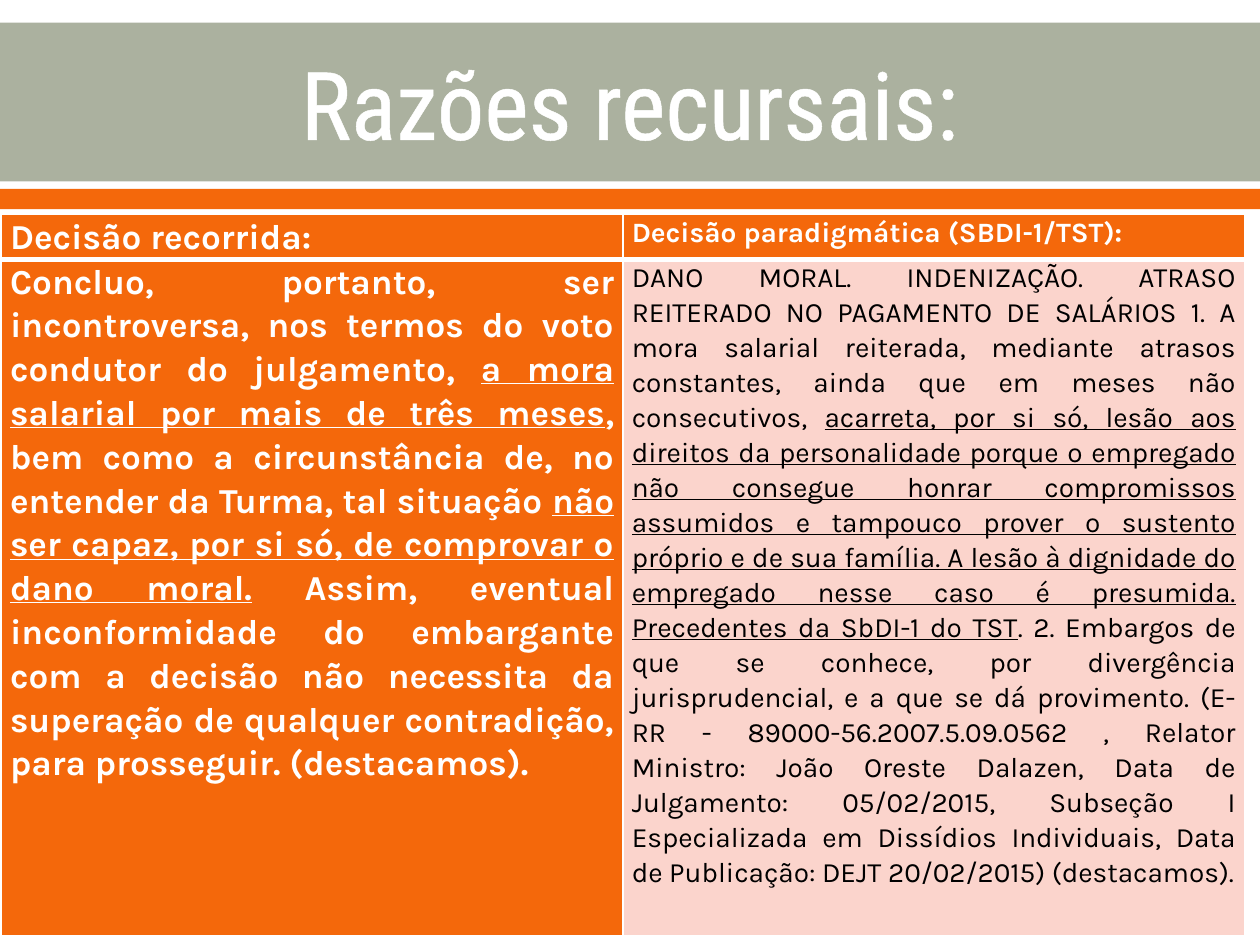
from dataclasses import dataclass

from lxml import etree
from pptx import Presentation
from pptx.dml.color import RGBColor
from pptx.enum.shapes import MSO_SHAPE
from pptx.enum.text import MSO_ANCHOR, PP_ALIGN
from pptx.oxml.ns import qn
from pptx.util import Inches, Pt

RECTANGLE = MSO_SHAPE.RECTANGLE
MIDDLE = MSO_ANCHOR.MIDDLE
CENTER, JUSTIFY = PP_ALIGN.CENTER, PP_ALIGN.JUSTIFY


@dataclass(frozen=True)
class Theme:
    sage: str = "ABB19F"
    orange: str = "F4680B"
    pink: str = "FBD4CC"
    white: str = "FFFFFF"
    black: str = "000000"
    title_font: str = "Roboto Condensed"
    body_font: str = "Karla"
    title_size: float = 54
    large: float = 20
    small: float = 16
    title_outline: float = 1.1
    thin: float = 1
    thick: float = 3


THEME = Theme()
WIDTH, HEIGHT = 10, 7.5
TITLE = "Razões recursais:"

# Each passage is a list of (text, underlined) pieces.
APPEALED_HEADING = [("Decisão recorrida:", False)]
PARADIGM_HEADING = [("Decisão paradigmática (SBDI-1/TST):", False)]
APPEALED_DECISION = [
    ("Concluo, portanto, ser incontroversa, nos termos do voto condutor do "
     "julgamento, ", False),
    ("a mora salarial por mais de três meses", True),
    (", bem como a circunstância de, no entender da Turma, tal situação ", False),
    ("não ser capaz, por si só, de comprovar o dano moral.", True),
    (" Assim, eventual inconformidade do embargante com a decisão não necessita "
     "da superação de qualquer contradição, para prosseguir. (destacamos).", False),
]
PARADIGM_DECISION = [
    ("DANO MORAL. INDENIZAÇÃO. ATRASO REITERADO NO PAGAMENTO DE SALÁRIOS 1. "
     "A mora salarial reiterada, mediante atrasos constantes, ainda que em meses "
     "não consecutivos, ", False),
    ("acarreta, por si só, lesão aos direitos da personalidade porque o empregado "
     "não consegue honrar compromissos assumidos e tampouco prover o sustento "
     "próprio e de sua família. A lesão à dignidade do empregado nesse caso é "
     "presumida. Precedentes da SbDI-1 do TST", True),
    (". 2. Embargos de que se conhece, por divergência jurisprudencial, e a que se "
     "dá provimento. (E-RR - 89000-56.2007.5.09.0562 , Relator Ministro: João "
     "Oreste Dalazen, Data de Julgamento: 05/02/2015, Subseção I Especializada em "
     "Dissídios Individuais, Data de Publicação: DEJT 20/02/2015) (destacamos).",
     False),
]


def rgb(color):
    return RGBColor.from_string(color)


def line_xml(tag, color, width):
    line = etree.Element(qn(tag), w=str(Pt(width)))
    fill = etree.SubElement(line, qn("a:solidFill"))
    etree.SubElement(fill, qn("a:srgbClr"), val=color)
    return line


def add_run(paragraph, text, font, size, color, bold=False, underline=False):
    run = paragraph.add_run()
    run.text = text
    run.font.name, run.font.size = font, Pt(size)
    run.font.bold, run.font.underline = bold, underline
    run.font.color.rgb = rgb(color)
    return run


def add_band(slide, box, color):
    band = slide.shapes.add_shape(RECTANGLE, *map(Inches, box))
    band.shadow.inherit = False
    band.fill.solid()
    band.fill.fore_color.rgb = rgb(color)
    band.line.fill.background()


def add_title(slide, box):
    frame = slide.shapes.add_textbox(*map(Inches, box)).text_frame
    frame.word_wrap = True
    frame.vertical_anchor = MIDDLE
    paragraph = frame.paragraphs[0]
    paragraph.alignment = CENTER
    run = add_run(paragraph, TITLE, THEME.title_font, THEME.title_size, THEME.white)
    outline = line_xml("a:ln", THEME.white, THEME.title_outline)
    run._r.get_or_add_rPr().insert(0, outline)


def set_borders(cell, top, bottom):
    widths = {"a:lnL": THEME.thin, "a:lnR": THEME.thin, "a:lnT": top, "a:lnB": bottom}
    properties = cell._tc.get_or_add_tcPr()
    for position, (tag, width) in enumerate(widths.items()):
        properties.insert(position, line_xml(tag, THEME.white, width))


def fill_cell(cell, passage, size, fill, color, bold):
    cell.margin_left = cell.margin_right = Inches(0.07)
    cell.margin_top = cell.margin_bottom = 0
    cell.fill.solid()
    cell.fill.fore_color.rgb = rgb(fill)
    paragraph = cell.text_frame.paragraphs[0]
    paragraph.alignment = JUSTIFY
    paragraph.line_spacing = 1.07
    paragraph.space_after = Pt(8)
    for text, underline in passage:
        add_run(paragraph, text, THEME.body_font, size, color, bold, underline)


def add_comparison(slide, box, heading_height):
    """Set the appealed decision beside the paradigm, under one heading row."""
    table = slide.shapes.add_table(2, 2, *map(Inches, box)).table
    for column in table.columns:
        column.width = Inches(box[2] / 2)
    table.rows[0].height = Inches(heading_height)
    table.rows[1].height = Inches(box[3] - heading_height)

    strong = (THEME.orange, THEME.white, True)
    plain = (THEME.pink, THEME.black, False)
    rows = [
        [(APPEALED_HEADING, THEME.large, *strong),
         (PARADIGM_HEADING, THEME.small, *strong)],
        [(APPEALED_DECISION, THEME.large, *strong),
         (PARADIGM_DECISION, THEME.small, *plain)],
    ]
    edges = [(THEME.thin, THEME.thick), (THEME.thick, THEME.thin)]
    for row, (contents, edge) in enumerate(zip(rows, edges)):
        for column, content in enumerate(contents):
            cell = table.cell(row, column)
            fill_cell(cell, *content)
            set_borders(cell, *edge)


def main():
    deck = Presentation()
    deck.slide_width, deck.slide_height = Inches(WIDTH), Inches(HEIGHT)
    slide = deck.slides.add_slide(deck.slide_layouts[6])
    add_band(slide, (0, 0.18, WIDTH, 1.26), THEME.sage)
    add_band(slide, (0, 1.5, WIDTH, 0.16), THEME.orange)
    add_title(slide, (0.05 * WIDTH, 0.2, 0.9 * WIDTH, 1.22))
    add_comparison(slide, (0.01, 1.7, 9.87, 5.72), heading_height=0.35)
    deck.save("out.pptx")


if __name__ == "__main__":
    main()
